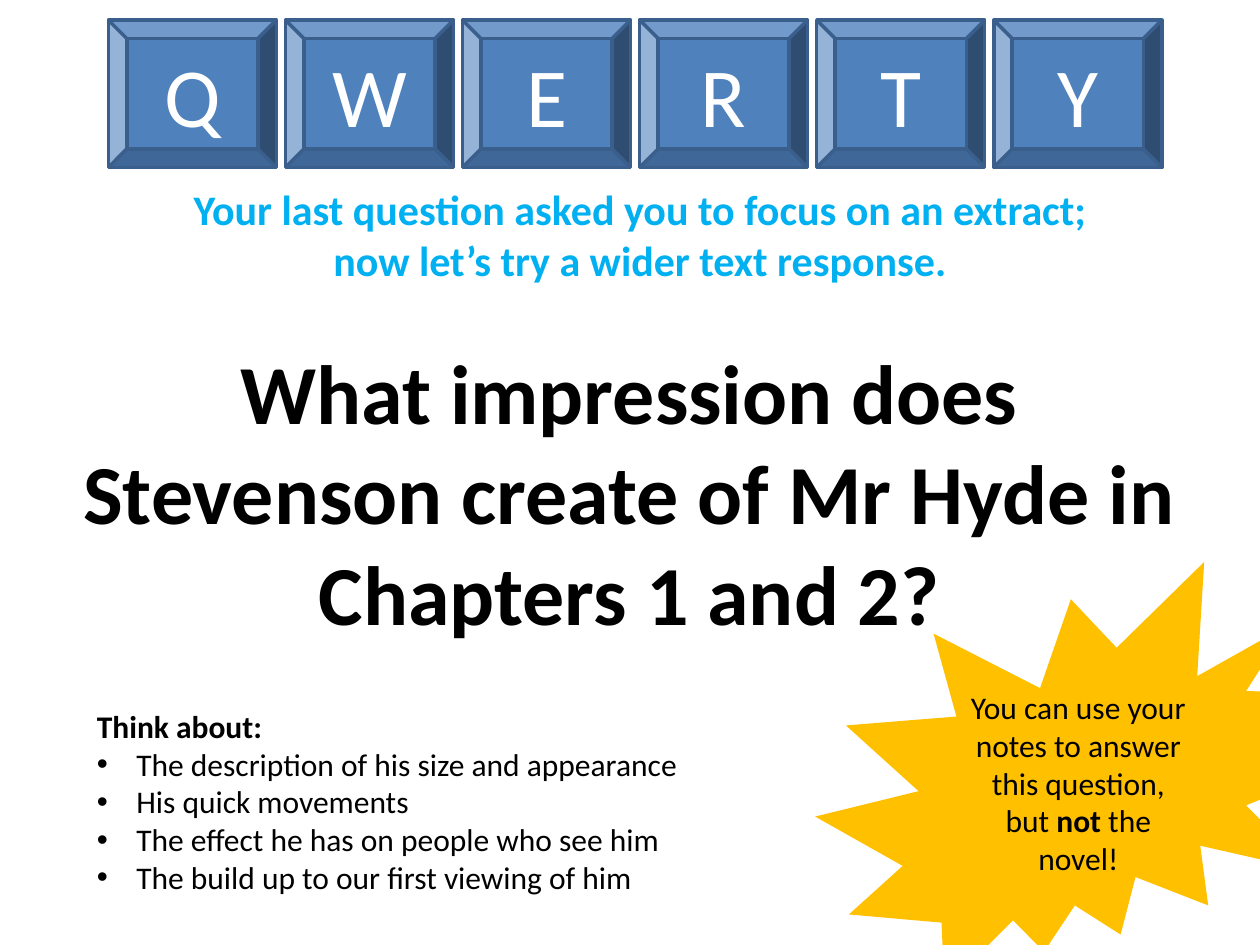
from lxml import etree
from pptx import Presentation
from pptx.dml.color import RGBColor
from pptx.enum.shapes import MSO_SHAPE
from pptx.enum.text import MSO_ANCHOR, MSO_AUTO_SIZE, PP_ALIGN
from pptx.oxml.ns import qn
from pptx.util import Pt

BEVEL = MSO_SHAPE.BEVEL
BURST = MSO_SHAPE.EXPLOSION2
TOP, MIDDLE = MSO_ANCHOR.TOP, MSO_ANCHOR.MIDDLE
LEFT, CENTER = PP_ALIGN.LEFT, PP_ALIGN.CENTER
FIT_SHAPE = MSO_AUTO_SIZE.SHAPE_TO_FIT_TEXT

BLACK = RGBColor(0x00, 0x00, 0x00)
WHITE = RGBColor(0xFF, 0xFF, 0xFF)
KEY_BLUE = RGBColor(0x4F, 0x81, 0xBD)
KEY_EDGE = RGBColor(0x3A, 0x5F, 0x8C)
SKY = RGBColor(0x00, 0xB0, 0xF0)
AMBER = RGBColor(0xFF, 0xC0, 0x00)

FONT = "Calibri"
KEY_GAP = 5.2
BULLET_INDENT = 22.5

KEYS = "QWERTY"
LEAD_IN = ("Your last question asked you to focus on an extract; "
           "now let’s try a wider text response.")
QUESTION = ("What impression does Stevenson create of Mr Hyde in "
            "Chapters 1 and 2?")
PROMPTS = [
    "The description of his size and appearance",
    "His quick movements",
    "The effect he has on people who see him",
    "The build up to our first viewing of him",
]
REMINDER = [
    ("You can use your notes to answer this question, but ", False),
    ("not", True),
    (" the novel!", False),
]


def place(shape, box):
    shape.left, shape.top, shape.width, shape.height = map(Pt, box)


def add_span(para, text, size, color, bold=False):
    span = para.add_run()
    span.text = text
    span.font.name = FONT
    span.font.size = Pt(size)
    span.font.bold = bold
    span.font.color.rgb = color


def prepare_frame(shape, anchor):
    frame = shape.text_frame
    frame.word_wrap = True
    frame.vertical_anchor = anchor
    return frame


def add_filled_shape(page, kind, box, fill):
    shape = page.shapes.add_shape(kind, *map(Pt, box))
    shape.shadow.inherit = False
    shape.fill.solid()
    shape.fill.fore_color.rgb = fill
    return shape


def set_bullet(para, mark):
    """Give the paragraph a hanging bullet, or none when mark is empty."""
    indent = BULLET_INDENT if mark else 0
    props = para._p.get_or_add_pPr()
    props.set("marL", str(Pt(indent)))
    props.set("indent", str(-Pt(indent)))
    if mark:
        etree.SubElement(props, qn("a:buFont")).set("typeface", "Arial")
        etree.SubElement(props, qn("a:buChar")).set("char", mark)
    else:
        etree.SubElement(props, qn("a:buNone"))


def add_key_row(page, box):
    left, top, width, height = box
    key_width = (width - KEY_GAP * (len(KEYS) - 1)) / len(KEYS)
    for index, letter in enumerate(KEYS):
        key_left = left + index * (key_width + KEY_GAP)
        key = add_filled_shape(
            page, BEVEL, (key_left, top, key_width, height), KEY_BLUE)
        key.line.color.rgb = KEY_EDGE
        key.line.width = Pt(2)
        para = prepare_frame(key, MIDDLE).paragraphs[0]
        para.alignment = CENTER
        add_span(para, letter, 48, WHITE)


def add_lead_in(page, box):
    shape = page.shapes.add_textbox(*map(Pt, box))
    frame = prepare_frame(shape, TOP)
    frame.auto_size = FIT_SHAPE
    para = frame.paragraphs[0]
    para.alignment = CENTER
    add_span(para, LEAD_IN, 24, SKY, bold=True)


def fill_question(page, box):
    title = page.shapes.title
    place(title, box)
    frame = prepare_frame(title, TOP)
    frame.auto_size = FIT_SHAPE
    para = frame.paragraphs[0]
    para.alignment = CENTER
    add_span(para, QUESTION, 48, BLACK, bold=True)


def fill_prompts(page, box):
    body = page.placeholders[1]
    place(body, box)
    frame = prepare_frame(body, TOP)
    frame.auto_size = FIT_SHAPE
    for index, text in enumerate(["Think about:", *PROMPTS]):
        heading = index == 0
        para = frame.paragraphs[0] if heading else frame.add_paragraph()
        para.alignment = LEFT
        para.space_before = Pt(0)
        set_bullet(para, "" if heading else "•")
        add_span(para, text, 18, BLACK, bold=heading)


def add_reminder(page, box):
    burst = add_filled_shape(page, BURST, box, AMBER)
    burst.line.fill.background()
    para = prepare_frame(burst, MIDDLE).paragraphs[0]
    para.alignment = CENTER
    for text, bold in REMINDER:
        add_span(para, text, 18, BLACK, bold)


def main():
    deck = Presentation()
    deck.slide_width, deck.slide_height = Pt(720), Pt(540)
    page = deck.slides.add_slide(deck.slide_layouts[1])
    add_reminder(page, (465.8, 321.1, 324.7, 244.1))
    add_key_row(page, (61.9, 11.5, 602, 84.2))
    add_lead_in(page, (101.5, 101.5, 528.5, 94.3))
    fill_question(page, (25.2, 190.8, 668.9, 181.4))
    fill_prompts(page, (48.2, 400.3, 635, 116.6))
    deck.save("out.pptx")


if __name__ == "__main__":
    main()
